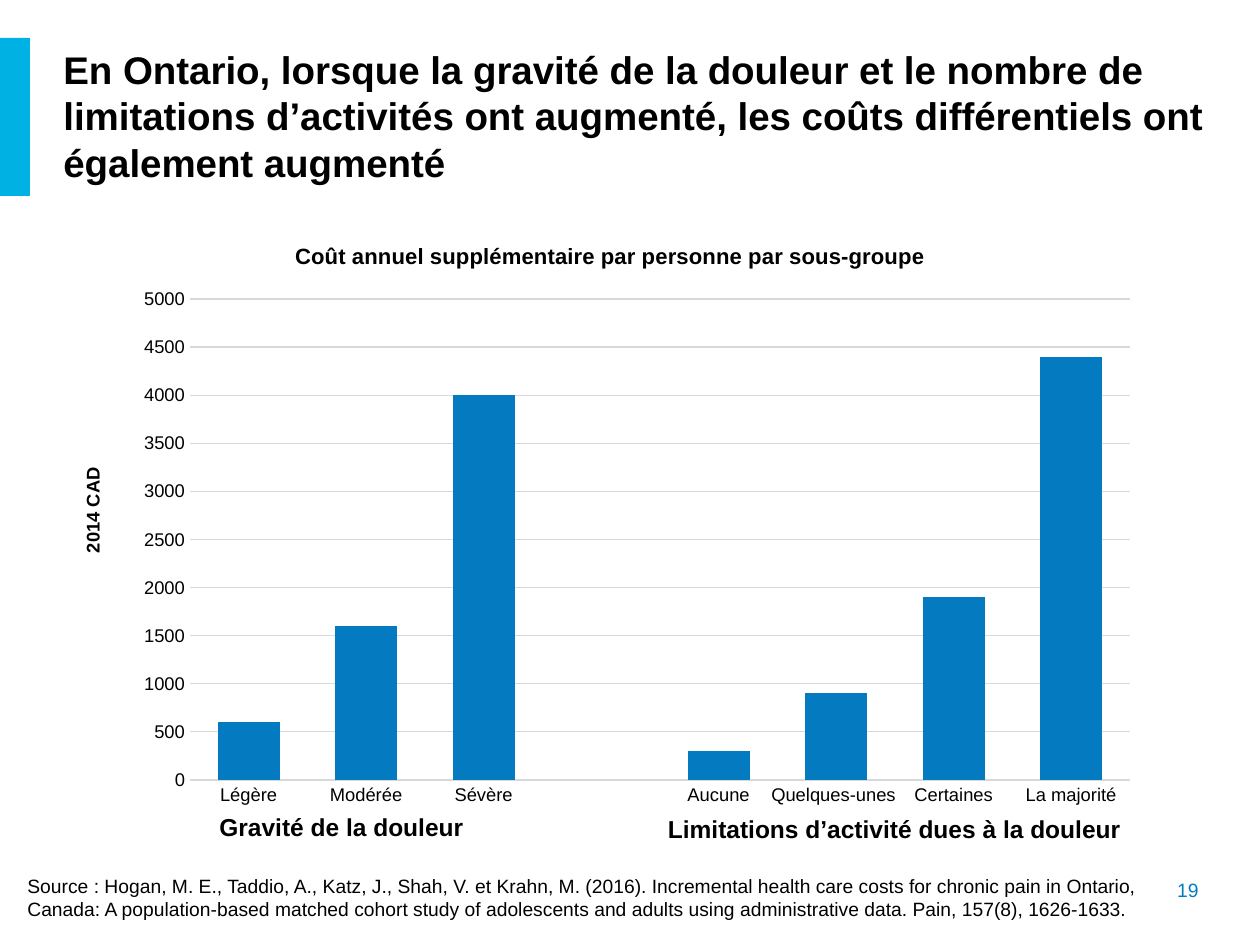
from dataclasses import dataclass

from lxml import etree
from pptx import Presentation
from pptx import util as u
from pptx.chart import data as cd
from pptx.dml.color import RGBColor
from pptx.enum import chart as ch
from pptx.enum import shapes, text
from pptx.oxml import ns

SCALE = 914400 / 126  # EMU per px


@dataclass(frozen=True)
class Theme:
    font: str = "Arial"
    ink: str = "000000"
    blue: str = "047BC1"
    cyan: str = "00B2E3"
    grid: str = "D9D9D9"
    head: float = 22
    group: float = 14
    note: float = 11
    title: float = 12.6
    axis: float = 10.5


@dataclass(frozen=True)
class Box:
    x: int
    y: int
    w: int
    h: int

    def emu(self) -> list[u.Emu]:
        return [px(n) for n in (self.x, self.y, self.w, self.h)]


@dataclass(frozen=True)
class Group:
    name: str
    box: Box


THEME = Theme()
PLOT = Box(68, 219, 1084, 599)
GRID = Box(190, 299, 940, 481)
COSTS = {
    "Légère": 600, "Modérée": 1600, "Sévère": 4000, "": None,
    "Aucune": 300, "Quelques-unes ": 900, "Certaines": 1900,
    "La majorité": 4400,
}
GROUPS = [
    Group("Gravité de la douleur", Box(205, 806, 273, 43)),
    Group("Limitations d’activité dues à la douleur", Box(653, 808, 483, 43)),
]
HEAD = ("En Ontario, lorsque la gravité de la douleur et le nombre de "
        "limitations d’activités ont augmenté, les coûts différentiels ont "
        "également augmenté")
SOURCE = ("Source\u00a0: Hogan, M. E., Taddio, A., Katz, J., Shah, V. et Krahn, M. "
          "(2016). Incremental health care costs for chronic pain in Ontario, "
          "Canada: A population-based matched cohort study of adolescents and "
          "adults using administrative data. Pain, 157(8), 1626-1633.")


def px(n: int) -> u.Emu:
    return u.Emu(round(n * SCALE))


def style(font, size: float, color: str = THEME.ink, bold: bool = False) -> None:
    font.name, font.size, font.bold = THEME.font, u.Pt(size), bold
    font.color.rgb = RGBColor.from_string(color)


def write(slide, words: str, box: Box, *, size: float, color: str = THEME.ink,
          bold: bool = False, align=text.PP_ALIGN.LEFT,
          anchor=text.MSO_ANCHOR.TOP, wrap: bool = True) -> None:
    frame = slide.shapes.add_textbox(*box.emu()).text_frame
    frame.word_wrap, frame.vertical_anchor = wrap, anchor
    para = frame.paragraphs[0]
    para.alignment = align
    run = para.add_run()
    run.text = words
    style(run.font, size, color, bold)


def place(node, x: int, y: int, w: int = 0, h: int = 0) -> None:
    """Fix a chart part at a slide position, as a share of the chart frame."""
    for old in node.findall(ns.qn("c:layout")):
        node.remove(old)
    layout = etree.Element(ns.qn("c:layout"))
    manual = etree.SubElement(layout, ns.qn("c:manualLayout"))
    parts = [("xMode", "edge"), ("yMode", "edge"),
             ("x", (x - PLOT.x) / PLOT.w), ("y", (y - PLOT.y) / PLOT.h)]
    if w:
        parts = [("layoutTarget", "inner"), *parts,
                 ("w", w / PLOT.w), ("h", h / PLOT.h)]
    for tag, val in parts:
        val = val if isinstance(val, str) else f"{val:.4f}"
        etree.SubElement(manual, ns.qn("c:" + tag)).set("val", val)
    text_node = node.find(ns.qn("c:tx"))
    if text_node is None:
        node.insert(0, layout)
    else:
        text_node.addnext(layout)


def entitle(title, words: str, size: float, x: int, y: int) -> None:
    para = title.text_frame.paragraphs[0]
    run = para.add_run()
    run.text = words
    style(run.font, size, bold=True)
    place(title._element, x, y)


def rule(line) -> None:
    line.color.rgb = RGBColor.from_string(THEME.grid)
    line.width = u.Pt(0.75)


def plot(slide) -> None:
    data = cd.CategoryChartData()
    data.categories = list(COSTS)
    data.add_series("Series 1", list(COSTS.values()))
    chart = slide.shapes.add_chart(
        ch.XL_CHART_TYPE.COLUMN_CLUSTERED, *PLOT.emu(), data).chart
    style(chart.font, THEME.axis)
    chart.has_legend = False
    entitle(chart.chart_title, "Coût annuel supplémentaire par personne par sous-groupe",
            THEME.title, 291, 238)

    # Columns
    bars = chart.plots[0]
    bars.gap_width, bars.overlap, bars.vary_by_categories = 89, -27, False
    fill = bars.series[0].format.fill
    fill.solid()
    fill.fore_color.rgb = RGBColor.from_string(THEME.blue)

    # Axes
    cats, vals = chart.category_axis, chart.value_axis
    for axis in (cats, vals):
        axis.major_tick_mark = axis.minor_tick_mark = ch.XL_TICK_MARK.NONE
        style(axis.tick_labels.font, THEME.axis)
    rule(cats.format.line)
    vals.minimum_scale, vals.maximum_scale, vals.major_unit = 0, 5000, 500
    vals.format.line.fill.background()
    vals.has_major_gridlines = True
    rule(vals.major_gridlines.format.line)
    entitle(vals.axis_title, "2014 CAD", THEME.axis, 77, 464)
    area = chart._chartSpace.chart.plotArea
    place(area, GRID.x, GRID.y, GRID.w, GRID.h)


def main() -> None:
    deck = Presentation()
    deck.slide_width, deck.slide_height = px(1260), px(945)
    slide = deck.slides.add_slide(deck.slide_layouts[6])

    # Accent bar and heading
    bar = slide.shapes.add_shape(
        shapes.MSO_SHAPE.RECTANGLE, *Box(0, 38, 30, 158).emu())
    bar.shadow.inherit = False
    bar.fill.solid()
    bar.fill.fore_color.rgb = RGBColor.from_string(THEME.cyan)
    bar.line.fill.background()
    write(slide, HEAD, Box(51, 35, 1178, 161), size=THEME.head, bold=True,
          anchor=text.MSO_ANCHOR.MIDDLE)

    # Chart and the names of its two groups
    plot(slide)
    for group in GROUPS:
        write(slide, group.name, group.box, size=THEME.group, bold=True,
              align=text.PP_ALIGN.CENTER, wrap=False)

    # Source and page number
    write(slide, SOURCE, Box(15, 868, 1189, 59), size=THEME.note)
    write(slide, "19", Box(1064, 872, 147, 37), size=THEME.note,
          color=THEME.blue, align=text.PP_ALIGN.RIGHT)
    deck.save("out.pptx")


if __name__ == "__main__":
    main()
